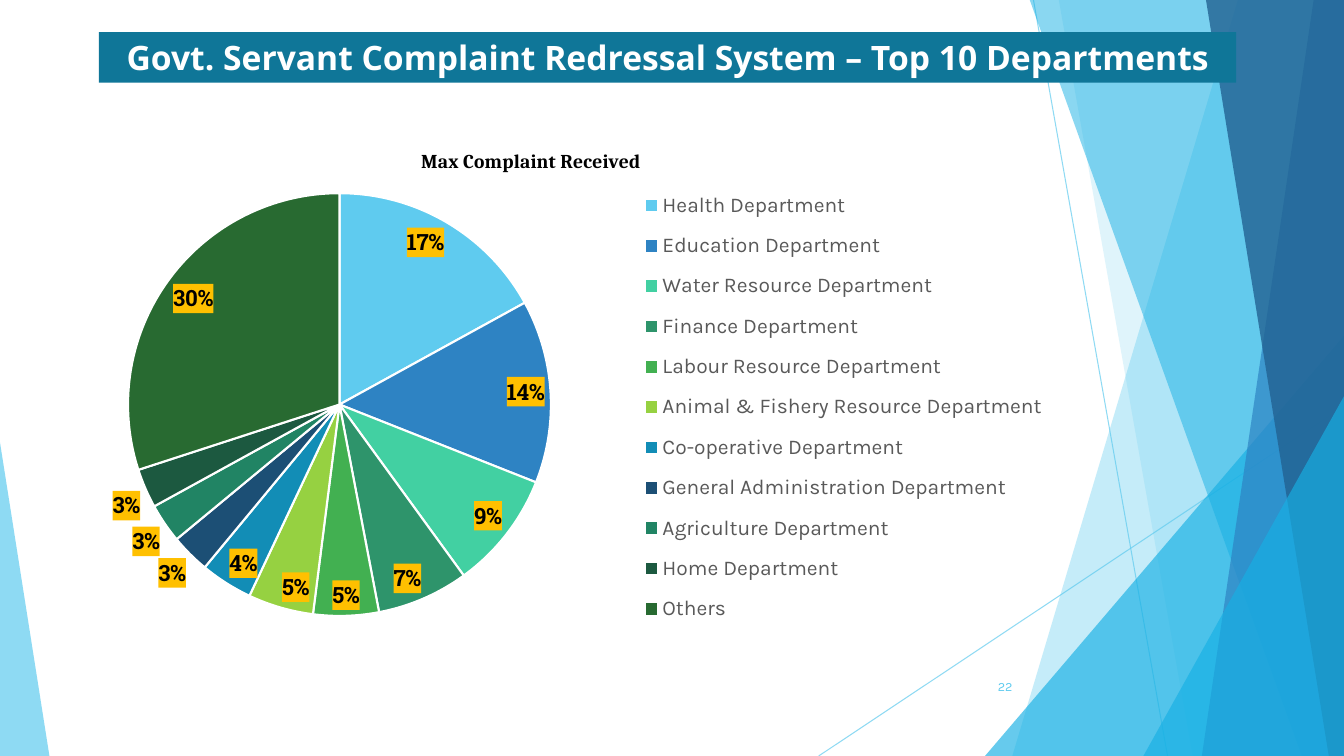
from copy import deepcopy

from pptx import Presentation, util as u
from pptx.chart.data import CategoryChartData
from pptx.dml.color import RGBColor
from pptx.enum import chart as charts, shapes, text
from pptx.oxml import parse_xml
from pptx.oxml.ns import nsdecls, qn

COLOURS = {
    "sky": "5FCBEF", "cyan": "17B0E4", "blue": "2E83C3", "navy": "226292",
    "teal": "0F7698", "white": "FFFFFF", "black": "000000",
    "grey": "595959", "amber": "FFC000",
}
BODY = "Karla"
WIDTH, HEIGHT = 13.33, 7.5

# department, percentage, slice colour
DEPARTMENTS = [
    ("Health Department", 17, "5FCBEF"),
    ("Education Department", 14, "2E83C3"),
    ("Water Resource Department", 9, "42D0A2"),
    ("Finance Department", 7, "2E946B"),
    ("Labour Resource Department", 5, "42B051"),
    ("Animal & Fishery Resource Department", 5, "96D141"),
    ("Co-operative Department", 4, "128DB6"),
    ("General Administration Department", 3, "1C4F75"),
    ("Agriculture Department", 3, "218464"),
    ("Home Department", 3, "1C5940"),
    ("Others", 30, "286A31"),
]


def rgb(colour):
    return RGBColor.from_string(COLOURS.get(colour, colour))


def style_font(font, face, size, colour, bold=False):
    font.name, font.size, font.bold = face, u.Pt(size), bold
    font.color.rgb = rgb(colour)


def set_opacity(item, percent):
    for colour in item.element.xpath("./p:spPr//a:srgbClr"):
        colour.append(parse_xml(f'<a:alpha {nsdecls("a")} val="{percent * 1000}"/>'))


def manual_layout(x, y, w=None, h=None, inner=False):
    """Chart layout whose lengths are fractions of the chart's frame."""
    target = '<c:layoutTarget val="inner"/>' if inner else ""
    modes = '<c:xMode val="edge"/><c:yMode val="edge"/>'
    sizes = "".join(f'<c:{name} val="{value}"/>'
                    for name, value in zip("xywh", (x, y, w, h)) if value is not None)
    return parse_xml(f'<c:layout {nsdecls("c")}><c:manualLayout>{target}{modes}{sizes}'
                     '</c:manualLayout></c:layout>')


def place(chart, part, layout, after=None):
    """Replace the layout of a chart part, after the named child or first."""
    parent = chart.element.xpath(f".//c:{part}")[0]
    for old in parent.findall(qn("c:layout")):
        parent.remove(old)
    if after:
        parent.find(qn(after)).addnext(layout)
    else:
        parent.insert(0, layout)


class SlideBuilder:
    def __init__(self, page):
        self.shapes = page.shapes

    def finish(self, shape, colour, opacity=100):
        shape.shadow.inherit = False
        shape.fill.solid()
        shape.fill.fore_color.rgb = rgb(colour)
        shape.line.fill.background()
        if opacity < 100:
            set_opacity(shape, opacity)
        return shape

    def line(self, start, end, colour, opacity):
        line = self.shapes.add_connector(
            shapes.MSO_CONNECTOR.STRAIGHT, *map(u.Inches, start + end))
        line.line.color.rgb = rgb(colour)
        line.line.width = u.Pt(0.75)
        line.element.spPr.append(parse_xml(f'<a:effectLst {nsdecls("a")}/>'))
        set_opacity(line, opacity)

    def right_band(self, top_x, bottom_x, colour, opacity):
        """Full-height band from a slanted left edge to the slide's right edge."""
        corners = [(top_x, -0.01), (WIDTH, -0.01), (WIDTH, HEIGHT), (bottom_x, HEIGHT)]
        points = [(u.Inches(x), u.Inches(y)) for x, y in corners]
        builder = self.shapes.build_freeform(*points[0])
        builder.add_line_segments(points[1:], close=True)
        self.finish(builder.convert_to_shape(), colour, opacity)

    def shape(self, kind, frame, colour, opacity=100):
        shape = self.shapes.add_shape(kind, *map(u.Inches, frame))
        return self.finish(shape, colour, opacity)

    def triangle(self, frame, apex, colour, opacity):
        shape = self.shape(shapes.MSO_SHAPE.ISOSCELES_TRIANGLE, frame, colour, opacity)
        shape.adjustments[0] = apex

    def add_text(self, box, words, face, size, colour, align, bold=False):
        frame = box.text_frame
        frame.word_wrap = True
        frame.vertical_anchor = text.MSO_ANCHOR.MIDDLE
        para = frame.paragraphs[0]
        para.alignment = align
        span = para.add_run()
        span.text = words
        style_font(span.font, face, size, colour, bold)

    def text_box(self, frame, *style):
        self.add_text(self.shapes.add_textbox(*map(u.Inches, frame)), *style)

    def pie(self, frame, title, rows):
        data = CategoryChartData()
        data.categories = [name for name, _, _ in rows]
        data.add_series("Series 1", [value for _, value, _ in rows])
        chart = self.shapes.add_chart(
            charts.XL_CHART_TYPE.PIE, *map(u.Inches, frame), data).chart
        style_font(chart.font, BODY, 10, "black")
        chart.plots[0].vary_by_categories = True

        chart.has_title = True
        span = chart.chart_title.text_frame.paragraphs[0].add_run()
        span.text = title
        style_font(span.font, "Cambria", 14, "black", True)
        place(chart, "title", manual_layout(0.39, 0.03), "c:tx")

        chart.has_legend = True
        chart.legend.position = charts.XL_LEGEND_POSITION.RIGHT
        chart.legend.include_in_layout = False
        style_font(chart.legend.font, BODY, 15, "grey")
        place(chart, "legend", manual_layout(0.6, 0.09, 0.4, 0.86), "c:legendPos")
        place(chart, "plotArea", manual_layout(0.11, 0.12, 0.41, 0.79, inner=True))
        self.slices(chart, rows)

    def slices(self, chart, rows):
        """Colour the slices and label them, the thinnest ones outside."""
        series = chart.plots[0].series[0]
        labels = series.data_labels
        labels.show_percentage, labels.show_value = True, False
        labels.position = charts.XL_LABEL_POSITION.INSIDE_END
        label_style = ("Roboto Slab", 16, "black", True)
        style_font(labels.font, *label_style)
        for index, (_, value, colour) in enumerate(rows):
            point = series.points[index]
            point.format.fill.solid()
            point.format.fill.fore_color.rgb = rgb(colour)
            point.format.line.color.rgb = rgb("white")
            point.format.line.width = u.Pt(1.5)
            if value <= 3:
                style_font(point.data_label.font, *label_style)
                point.data_label.position = charts.XL_LABEL_POSITION.OUTSIDE_END

        for flag, shown in (("showVal", "0"), ("showPercent", "1")):
            for item in chart.element.xpath(f".//c:dLbl/c:{flag}"):
                item.set("val", shown)
        backing = parse_xml(
            f'<c:spPr {nsdecls("c", "a")}><a:solidFill><a:srgbClr val="{COLOURS["amber"]}"/>'
            '</a:solidFill></c:spPr>')
        for holder in chart.element.xpath(".//c:dLbls | .//c:dLbl"):
            for old in holder.findall(qn("c:spPr")):
                holder.remove(old)
            holder.find(qn("c:txPr")).addprevious(deepcopy(backing))


def main():
    deck = Presentation()
    deck.slide_width, deck.slide_height = u.Inches(WIDTH), u.Inches(HEIGHT)
    slide = SlideBuilder(deck.slides.add_slide(deck.slide_layouts[6]))

    slide.line((10.25, 0), (11.58, HEIGHT), "sky", 70)
    slide.line((WIDTH, 4.03), (8.12, HEIGHT), "sky", 70)
    slide.right_band(12.28, 10.04, "sky", 36)
    slide.right_band(10.5, 11.83, "sky", 20)
    slide.triangle((9.77, 3.33, 3.56, 4.17), 1, "cyan", 66)
    slide.right_band(10.21, 12.91, "cyan", 50)
    slide.right_band(13.03, 11.92, "blue", 70)
    slide.right_band(11.96, 13.18, "navy", 80)
    slide.triangle((11.34, 3.93, 1.99, 3.57), 1, "cyan", 66)
    slide.triangle((0, 4.39, 0.49, 3.11), 0, "sky", 70)

    slide.pie((0.12, 1.28, 10.31, 5.31), "Max Complaint Received", DEPARTMENTS)
    banner = slide.shape(shapes.MSO_SHAPE.RECTANGLE, (0.98, 0.32, 11.28, 0.5), "teal")
    slide.add_text(banner, "Govt. Servant Complaint Redressal System – Top 10 Departments",
                   "Noto Sans", 24, "white", text.PP_ALIGN.CENTER, True)
    slide.text_box((9.39, 6.61, 0.75, 0.4), "22", BODY, 9, "sky", text.PP_ALIGN.RIGHT)
    deck.save("out.pptx")


if __name__ == "__main__":
    main()
